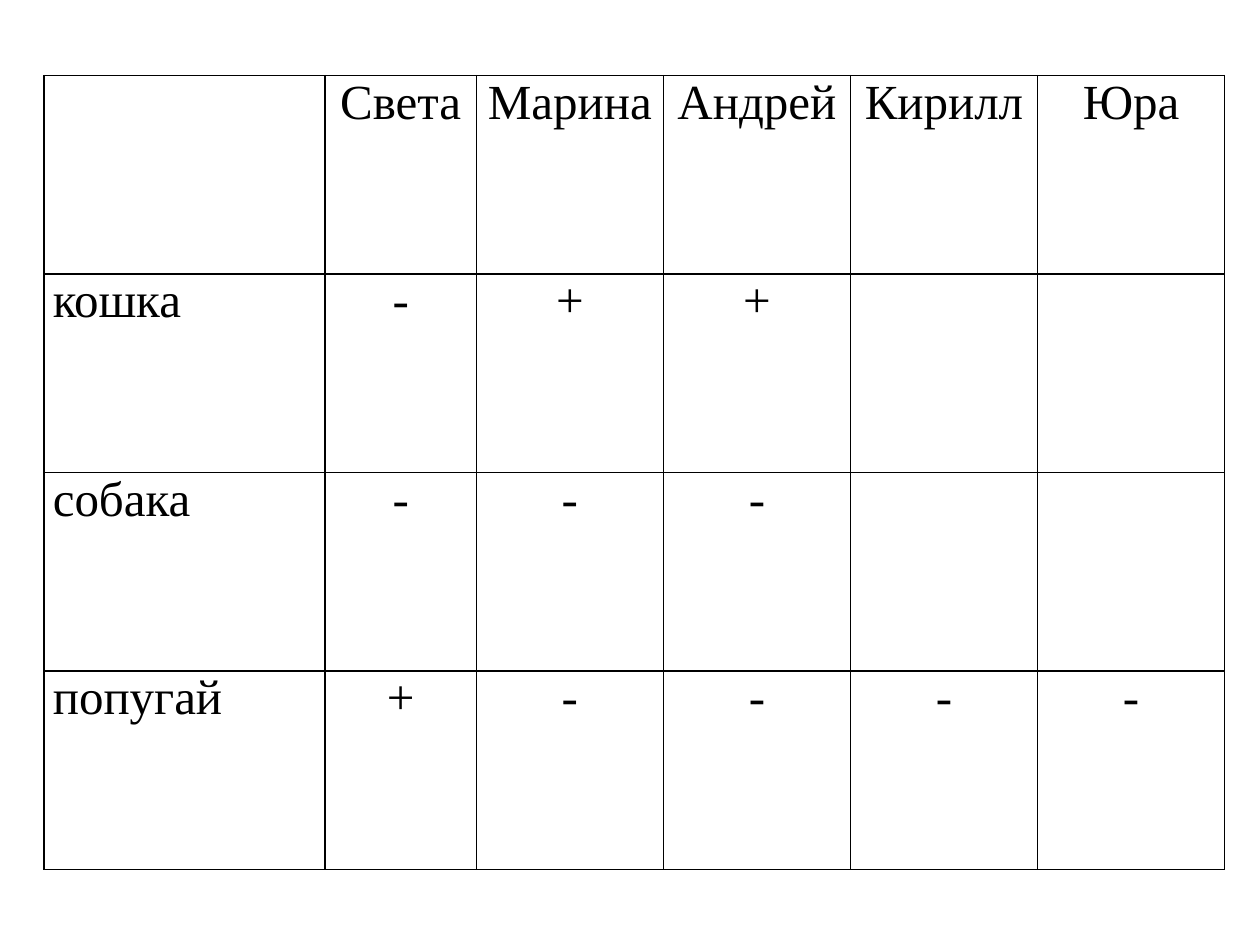
from lxml.etree import SubElement
from pptx import Presentation
from pptx.dml.color import RGBColor
from pptx.enum.text import PP_ALIGN as Align
from pptx.oxml.ns import qn
from pptx.util import Inches, Pt

ROWS = [
    ["", "Света", "Марина", "Андрей", "Кирилл", "Юра"],
    ["кошка", "-", "+", "+", "", ""],
    ["собака", "-", "-", "-", "", ""],
    ["попугай", "+", "-", "-", "-", "-"],
]
COL_WIDTHS = [2.23, 1.2] + [1.485] * 4
LEFT, TOP, HEIGHT = 0.35, 0.6, 6.3
THEME = {
    "font": {"name": "Times New Roman", "size": Pt(28)},
    "ink": "000000",
    "border": Pt(1),
}
MARGINS = {
    "margin_left": Inches(0.07),
    "margin_right": Inches(0.07),
    "margin_top": 0,
    "margin_bottom": 0,
}


def set_attrs(obj, values):
    for name, value in values.items():
        setattr(obj, name, value)


def add_borders(cell):
    props = cell._tc.get_or_add_tcPr()
    for side in ("lnL", "lnR", "lnT", "lnB"):
        line = SubElement(props, qn(f"a:{side}"), w=str(THEME["border"]))
        fill = SubElement(line, qn("a:solidFill"))
        SubElement(fill, qn("a:srgbClr"), val=THEME["ink"])


def write_cell(cell, text, align):
    set_attrs(cell, MARGINS)
    add_borders(cell)
    cell.fill.background()
    if not text:
        return
    p = cell.text_frame.paragraphs[0]
    set_attrs(p, {"alignment": align, "space_after": Pt(6)})
    r = p.add_run()
    r.text = text
    set_attrs(r.font, THEME["font"])
    r.font.color.rgb = RGBColor.from_string(THEME["ink"])


def main():
    prs = Presentation()
    set_attrs(prs, {"slide_width": Inches(10), "slide_height": Inches(7.5)})
    s = prs.slides.add_slide(prs.slide_layouts[6])
    table = s.shapes.add_table(
        len(ROWS), len(COL_WIDTHS),
        Inches(LEFT), Inches(TOP), Inches(sum(COL_WIDTHS)), Inches(HEIGHT),
    ).table
    set_attrs(table, {"first_row": False, "horz_banding": False})
    for col, width in zip(table.columns, COL_WIDTHS):
        col.width = Inches(width)
    for i, row in enumerate(ROWS):
        table.rows[i].height = Inches(HEIGHT / len(ROWS))
        for j, text in enumerate(row):
            write_cell(table.cell(i, j), text, Align.CENTER if j else Align.JUSTIFY)
    prs.save("out.pptx")


if __name__ == "__main__":
    main()
